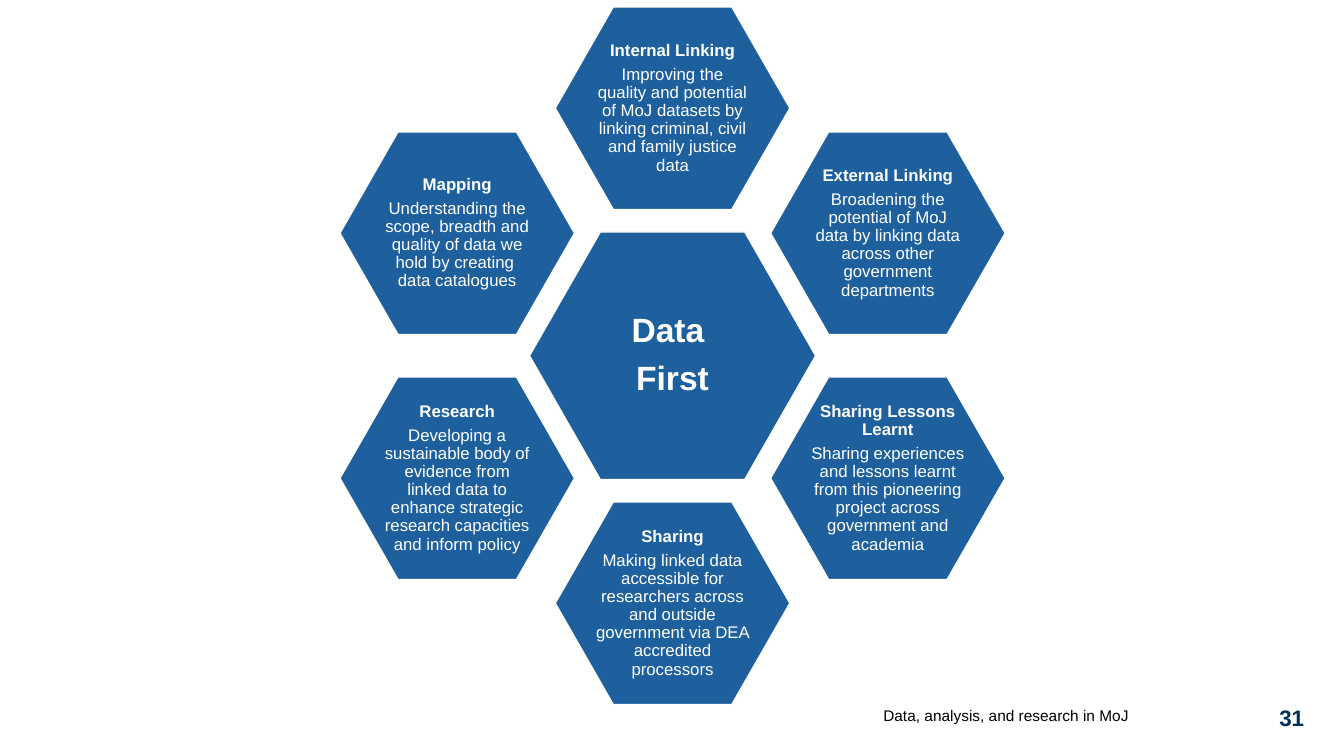
"""Build the Data First hexagon slide."""
from dataclasses import dataclass

from pptx import Presentation
from pptx.dml.color import RGBColor
from pptx.enum.text import MSO_ANCHOR, PP_ALIGN
from pptx.util import Pt

HUB_LINES = [("Data ", True), ("First", True)]
PETALS = [
    (0, -2, "Internal Linking", "Improving the quality and potential of MoJ datasets by linking criminal, civil and family justice data"),
    (1, -1, "External Linking", "Broadening the potential of MoJ data by linking data across other government departments"),
    (1, 1, "Sharing Lessons Learnt", "Sharing experiences and lessons learnt from this pioneering project across government and academia"),
    (0, 2, "Sharing", "Making linked data accessible for researchers across and outside government via DEA accredited processors"),
    (-1, 1, "Research", "Developing a sustainable body of evidence from linked data to enhance strategic research capacities and inform policy"),
    (-1, -1, "Mapping", "Understanding the scope, breadth and quality of data we hold by creating  data catalogues"),
]
FOOTER = "Data, analysis, and research in MoJ"
PAGE_NUMBER = "31"


@dataclass(frozen=True)
class Theme:
    """Colours and type sizes."""
    font: str = "Arial"
    fill: RGBColor = RGBColor(0x1D, 0x60, 0x9D)
    white: RGBColor = RGBColor(0xFF, 0xFF, 0xFF)
    black: RGBColor = RGBColor(0, 0, 0)
    navy: RGBColor = RGBColor(0x00, 0x30, 0x57)
    hub_size: int = 24
    petal_size: int = 12
    footer_size: int = 11
    number_size: int = 16


THEME = Theme()
CENTRE = (480.4, 254.1)
HUB_SIZE = (204.4, 176.8)
PETAL_SIZE = (167.6, 144.8)
HUB_INSETS = (35.3, 30.2)
PETAL_INSETS = (28.8, 25.2)
COLUMN_STEP = 153.8
ROW_OFFSETS = {-2: -176.8, -1: -87.5, 1: 87.5, 2: 176.8}
CORNER = 0.2475


def apply(target, values):
    """Set each named attribute on the target."""
    for name, value in values.items():
        setattr(target, name, value)


def write(shape, lines, size, colour, insets=(0, 0), align=PP_ALIGN.CENTER,
          anchor=MSO_ANCHOR.MIDDLE, paragraph_format=None):
    """Fill a shape with (text, bold) paragraphs."""
    frame = shape.text_frame
    across, down = (Pt(inset) for inset in insets)
    apply(frame, {"word_wrap": True, "vertical_anchor": anchor,
                  "margin_left": across, "margin_right": across,
                  "margin_top": down, "margin_bottom": down})
    for index, (text, bold) in enumerate(lines):
        para = frame.add_paragraph() if index else frame.paragraphs[0]
        apply(para, {"alignment": align, **(paragraph_format or {})})
        span = para.add_run()
        span.text = text
        apply(span.font, {"name": THEME.font, "size": Pt(size), "bold": bold})
        span.font.color.rgb = colour


def add_hexagon(page, centre, extent, lines, size, insets):
    """Draw a hexagon around its centre and write its text."""
    (x, y), (width, height) = centre, extent
    half_width, half_height = width / 2, height / 2
    flat = half_width - width * CORNER
    corners = [(-half_width, 0), (-flat, -half_height), (flat, -half_height),
               (half_width, 0), (flat, half_height), (-flat, half_height)]
    points = [(Pt(x + across), Pt(y + down)) for across, down in corners]
    builder = page.shapes.build_freeform(*points[0], scale=1.0)
    builder.add_line_segments(points[1:], close=True)
    hexagon = builder.convert_to_shape()
    hexagon.shadow.inherit = False
    hexagon.fill.solid()
    hexagon.fill.fore_color.rgb = THEME.fill
    hexagon.line.color.rgb = THEME.white
    hexagon.line.width = Pt(1)
    write(hexagon, lines, size, THEME.white, insets,
          paragraph_format={"line_spacing": 0.9, "space_after": Pt(size * 0.35)})


def add_label(page, place, *text_format):
    """Add a text box at a place given in points."""
    box = page.shapes.add_textbox(*(Pt(length) for length in place))
    write(box, *text_format)


def main():
    """Build and save the deck."""
    deck = Presentation()
    apply(deck, {"slide_width": Pt(960), "slide_height": Pt(540)})
    page = deck.slides.add_slide(deck.slide_layouts[6])
    add_label(page, (582.5, 498.2, 223.9, 25.9), [(FOOTER, False)], THEME.footer_size,
              THEME.black, (0, 0), PP_ALIGN.RIGHT, MSO_ANCHOR.MIDDLE)
    add_label(page, (908.6, 503.3, 28.1, 20.2), [(PAGE_NUMBER, True)], THEME.number_size,
              THEME.navy, (0, 0), PP_ALIGN.CENTER, MSO_ANCHOR.TOP)
    add_hexagon(page, CENTRE, HUB_SIZE, HUB_LINES, THEME.hub_size, HUB_INSETS)
    for column, row, heading, detail in PETALS:
        centre = (CENTRE[0] + column * COLUMN_STEP, CENTRE[1] + ROW_OFFSETS[row])
        add_hexagon(page, centre, PETAL_SIZE, [(heading, True), (detail, False)],
                    THEME.petal_size, PETAL_INSETS)
    deck.save("out.pptx")


if __name__ == "__main__":
    main()
